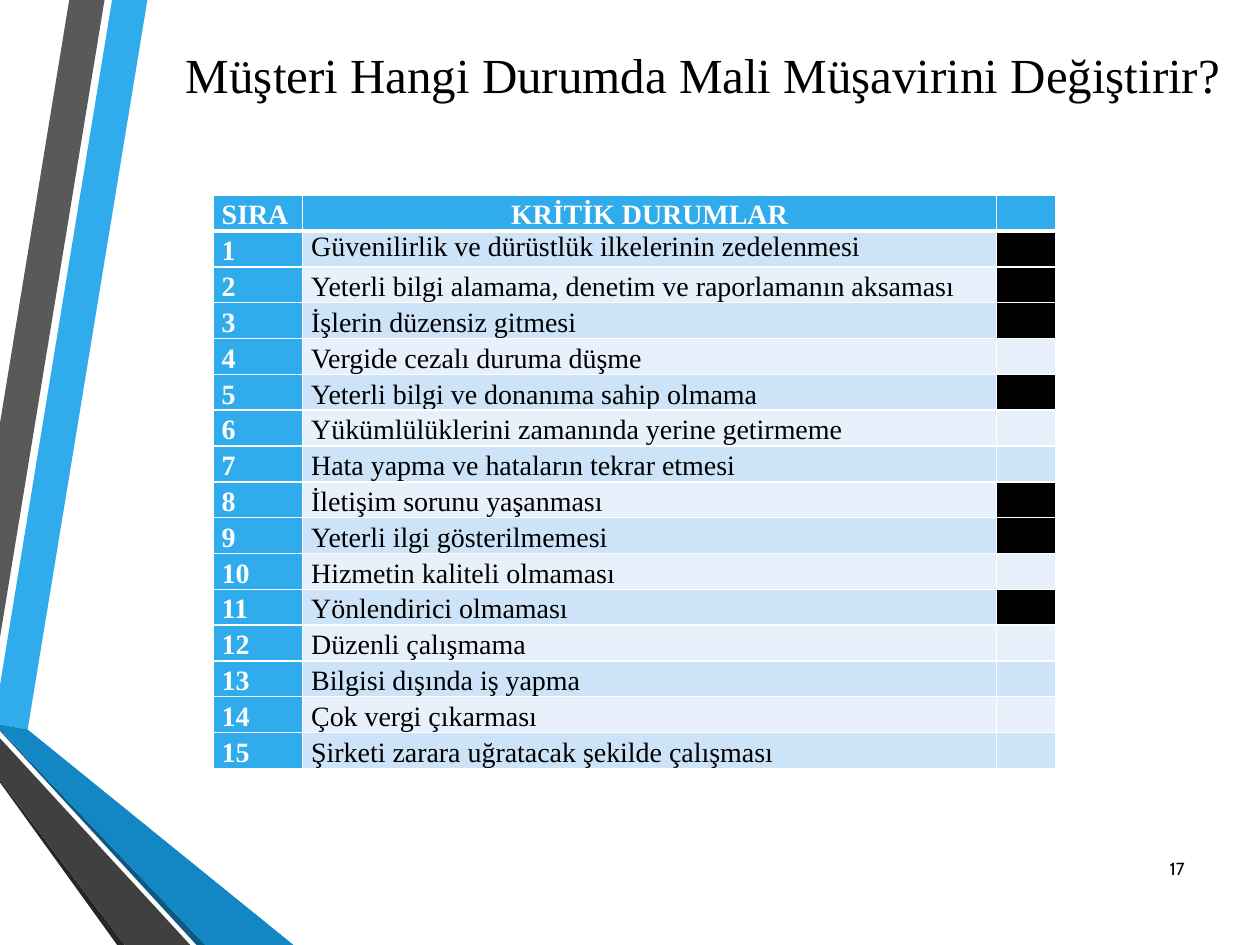
from lxml import etree
from pptx import Presentation
from pptx.dml.color import RGBColor
from pptx.enum.text import MSO_ANCHOR, PP_ALIGN
from pptx.oxml.ns import qn
from pptx.util import Inches, Pt

LEFT, CENTER, RIGHT = PP_ALIGN.LEFT, PP_ALIGN.CENTER, PP_ALIGN.RIGHT
TOP, MIDDLE = MSO_ANCHOR.TOP, MSO_ANCHOR.MIDDLE
SERIF, SANS = "Times New Roman", "Cabin"
BLACK, WHITE, BLUE = "000000", "FFFFFF", "30ACEC"
BANDS = ("CDE3F8", "E8F1FB")


def color(value):
    return RGBColor.from_string(value)


def write(frame, text, size=16, font=SERIF, ink=BLACK, bold=False,
          align=LEFT, anchor=TOP, spacing=None):
    frame.word_wrap = True
    frame.vertical_anchor = anchor
    paragraph = frame.paragraphs[0]
    paragraph.alignment = align
    if spacing:
        paragraph.line_spacing = spacing
    run = paragraph.add_run()
    run.text = text
    run.font.size = Pt(size)
    run.font.name = font
    run.font.bold = bold
    run.font.color.rgb = color(ink)


presentation = Presentation()
presentation.slide_width = Inches(10)
presentation.slide_height = Inches(7.5)
slide = presentation.slides.add_slide(presentation.slide_layouts[6])

# Every length below counts cells of a grid of 1000 columns by 750 rows
unit = presentation.slide_width // 1000

# Folded ribbons along the left edge, back to front
ribbons = [
    (BLUE, [(0, 544), (0, 575), (22, 579), (117, 0), (89, 0)]),
    ("595959", [(83, 0), (55, 0), (0, 336), (0, 506)]),
    ("262626", [(0, 619), (0, 621), (93, 750), (99, 750)]),
    ("0C5A82", [(0, 579), (0, 580), (156, 750), (163, 750)]),
    ("1287C3", [(0, 579), (163, 750), (233, 750), (22, 579), (0, 575)]),
    ("404040", [(0, 619), (99, 750), (151, 750), (0, 586)]),
]
for fill, points in ribbons:
    builder = slide.shapes.build_freeform(*points[0], scale=unit)
    builder.add_line_segments(points[1:], close=True)
    ribbon = builder.convert_to_shape()
    ribbon.shadow.inherit = False
    ribbon.fill.solid()
    ribbon.fill.fore_color.rgb = color(fill)
    ribbon.line.fill.background()

# Critical situations; True marks a black last cell
situations = [
    ("Güvenilirlik ve dürüstlük ilkelerinin zedelenmesi", True),
    ("Yeterli bilgi alamama, denetim ve raporlamanın aksaması", True),
    ("İşlerin düzensiz gitmesi", True),
    ("Vergide cezalı duruma düşme", False),
    ("Yeterli bilgi ve donanıma sahip olmama", True),
    ("Yükümlülüklerini zamanında yerine getirmeme", False),
    ("Hata yapma ve hataların tekrar etmesi", False),
    ("İletişim sorunu yaşanması", True),
    ("Yeterli ilgi gösterilmemesi", True),
    ("Hizmetin kaliteli olmaması", False),
    ("Yönlendirici olmaması", True),
    ("Düzenli çalışmama", False),
    ("Bilgisi dışında iş yapma", False),
    ("Çok vergi çıkarması", False),
    ("Şirketi zarara uğratacak şekilde çalışması", False),
]
rows = [("SIRA", "KRİTİK DURUMLAR", BLUE)]
for number, (situation, marked) in enumerate(situations, 1):
    band = BANDS[(number - 1) % 2]
    rows.append((str(number), situation, BLACK if marked else band))

# Table
widths = (71, 551, 47)
table = slide.shapes.add_table(
    len(rows), len(widths), 169 * unit, 155 * unit,
    sum(widths) * unit, 455 * unit).table
table.horz_banding = False
for column, width in zip(table.columns, widths):
    column.width = width * unit

for row_index, (label, situation, last_fill) in enumerate(rows):
    header = row_index == 0
    middle_fill = BLUE if header else BANDS[(row_index - 1) % 2]
    fills = (BLUE, middle_fill, last_fill)
    for column_index, text in enumerate((label, situation, "")):
        cell = table.cell(row_index, column_index)
        cell.margin_left = cell.margin_right = 7 * unit
        cell.margin_top = cell.margin_bottom = 0

        # White borders, thicker below the header
        for side in ("L", "R", "T", "B"):
            thick = (row_index, side) in ((0, "B"), (1, "T"))
            border = etree.SubElement(
                cell._tc.get_or_add_tcPr(), qn(f"a:ln{side}"),
                w=str(Pt(3 if thick else 1)))
            solid = etree.SubElement(border, qn("a:solidFill"))
            etree.SubElement(solid, qn("a:srgbClr"), val=WHITE)
        cell.fill.solid()
        cell.fill.fore_color.rgb = color(fills[column_index])

        if text:
            strong = header or column_index == 0
            write(cell.text_frame, text, bold=strong,
                  ink=WHITE if strong else BLACK,
                  align=CENTER if header and column_index == 1 else LEFT,
                  spacing=1.0 if (row_index, column_index) == (1, 1) else 1.15)
        else:
            # A small type size keeps empty cells from stretching the row
            etree.SubElement(cell.text_frame.paragraphs[0]._p,
                             qn("a:endParaRPr"), sz="1000")

# Title
title = slide.shapes.add_textbox(130 * unit, 30 * unit, 856 * unit, 125 * unit)
write(title.text_frame, "Müşteri Hangi Durumda Mali Müşavirini Değiştirir?",
      size=28, align=CENTER)

# Page number
page = slide.shapes.add_textbox(905 * unit, 669 * unit, 45 * unit, 40 * unit)
write(page.text_frame, "17", size=10, font=SANS, align=RIGHT, anchor=MIDDLE)

presentation.save("out.pptx")
